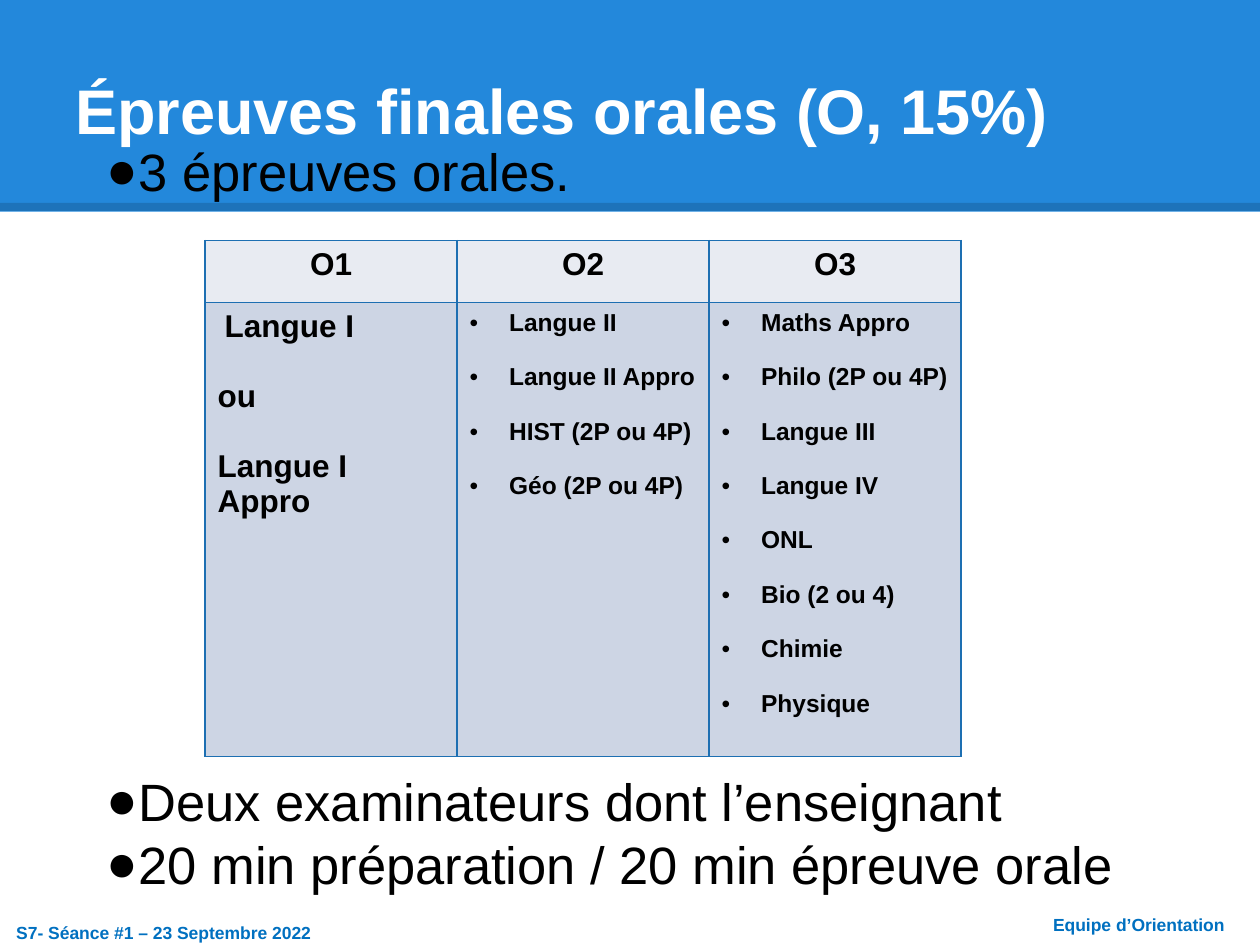
from dataclasses import dataclass

from lxml.etree import SubElement
from pptx import Presentation
from pptx.dml.color import RGBColor
from pptx.enum.shapes import MSO_CONNECTOR as Connector, MSO_SHAPE as Shape
from pptx.enum.text import MSO_ANCHOR as Anchor, MSO_AUTO_SIZE as AutoSize, PP_ALIGN as Align
from pptx.oxml import parse_xml
from pptx.oxml.ns import nsdecls, qn
from pptx.util import Pt

BLACK, WHITE, BANNER_BLUE, FOOTER_BLUE = "000000", "FFFFFF", "2388DB", "0070C0"
BORDER, HEADER_FILL, BODY_FILL = "1D6FB2", "E8EBF2", "CDD5E4"


@dataclass
class Line:
    text: str
    size: float
    color: str = BLACK
    bold: bool = True
    before: float = 0
    margin: float = 0
    hanging: float = 0
    bullet: str = ""
    align: Align = Align.LEFT


@dataclass
class Block:
    left: float
    top: float
    width: float
    height: float
    lines: list[Line]
    inset: float = 7.2
    anchor: Anchor = Anchor.TOP
    fit: AutoSize = AutoSize.NONE


@dataclass
class Column:
    heading: str
    subjects: list[Line]


def rgb(value: str) -> RGBColor:
    return RGBColor.from_string(value)


def write_lines(frame, lines: list[Line]) -> None:
    for index, line in enumerate(lines):
        paragraph = frame.add_paragraph() if index else frame.paragraphs[0]
        paragraph.alignment = line.align
        paragraph.space_before = Pt(line.before)
        run = paragraph.add_run()
        run.text = line.text
        for name, value in {"name": "Arial", "size": Pt(line.size), "bold": line.bold}.items():
            setattr(run.font, name, value)
        run.font.color.rgb = rgb(line.color)
        properties = paragraph._p.get_or_add_pPr()
        properties.set("marL", str(Pt(line.margin)))
        properties.set("indent", str(-Pt(line.hanging)))
        if line.bullet:
            bullet_color = SubElement(properties, qn("a:buClr"))
            SubElement(bullet_color, qn("a:srgbClr"), val=line.color)
            SubElement(properties, qn("a:buFont"), typeface="Arial")
            SubElement(properties, qn("a:buChar"), char=line.bullet)


def draw_block(slide, block: Block) -> None:
    box = slide.shapes.add_textbox(Pt(block.left), Pt(block.top), Pt(block.width), Pt(block.height))
    frame_format = {
        "word_wrap": True,
        "auto_size": block.fit,
        "vertical_anchor": block.anchor,
        "margin_left": Pt(7.2),
        "margin_right": Pt(7.2),
        "margin_top": Pt(block.inset),
        "margin_bottom": Pt(block.inset),
    }
    for name, value in frame_format.items():
        setattr(box.text_frame, name, value)
    write_lines(box.text_frame, block.lines)


def draw_banner(slide) -> None:
    banner = slide.shapes.add_shape(Shape.RECTANGLE, 0, 0, Pt(720), Pt(121))
    banner.shadow.inherit = False
    banner.fill.solid()
    banner.fill.fore_color.rgb = rgb(BANNER_BLUE)
    banner.line.fill.background()
    edge = slide.shapes.add_connector(Connector.STRAIGHT, 0, Pt(118.25), Pt(720), Pt(118.25))
    edge.line.width = Pt(4.5)
    edge.line.color.rgb = rgb(BLACK)
    shade = next(edge._element.iter(qn("a:srgbClr")))
    SubElement(shade, qn("a:alpha"), val="15000")
    SubElement(edge._element.spPr, qn("a:effectLst"))


def fill_cell(cell, fill: str, lines: list[Line]) -> None:
    cell.fill.solid()
    cell.fill.fore_color.rgb = rgb(fill)
    properties = cell._tc.get_or_add_tcPr()
    for index, side in enumerate(("lnL", "lnR", "lnT", "lnB")):
        properties.insert(index, parse_xml(
            f'<a:{side} {nsdecls("a")} w="{Pt(1)}"><a:solidFill>'
            f'<a:srgbClr val="{BORDER}"/></a:solidFill></a:{side}>'))
    write_lines(cell.text_frame, lines)


def draw_exam_table(slide, columns: list[Column]) -> None:
    heights = (35.4, 259.4)
    exams = slide.shapes.add_table(
        2, len(columns), Pt(117.2), Pt(137.5), Pt(144 * len(columns)), Pt(sum(heights))).table
    for row, height in zip(exams.rows, heights):
        row.height = Pt(height)
    for index, column in enumerate(columns):
        exams.columns[index].width = Pt(144)
        heading = Line(column.heading, 18, align=Align.CENTER)
        fill_cell(exams.cell(0, index), HEADER_FILL, [heading])
        fill_cell(exams.cell(1, index), BODY_FILL, column.subjects)


def subject_list(*subjects: str) -> list[Line]:
    return [Line(subject, 14, before=15.4 if index else 0, margin=22.5, hanging=22.5, bullet="•")
            for index, subject in enumerate(subjects)]


def key_point(text: str, before: float = 0) -> Line:
    return Line(text, 30, bold=False, before=before, margin=36, hanging=18, bullet="●")


def footer(text: str, left: float, top: float, width: float) -> Block:
    return Block(left, top, width, 19.4, [Line(text, 10, FOOTER_BLUE)], 3.6,
                 fit=AutoSize.SHAPE_TO_FIT_TEXT)


def main() -> None:
    deck = Presentation()
    deck.slide_width, deck.slide_height = Pt(720), Pt(540)
    slide = deck.slides.add_slide(deck.slide_layouts[6])
    draw_banner(slide)
    title = Line("Épreuves finales orales (O, 15%)", 36, WHITE)
    draw_block(slide, Block(36, 1.4, 648, 90, [title], anchor=Anchor.BOTTOM))
    draw_block(slide, Block(36, 72, 648, 425.5, [
        key_point("3 épreuves orales."),
        key_point("Deux examinateurs dont l’enseignant", before=324),
        key_point("20 min préparation / 20 min épreuve orale"),
    ]))
    draw_block(slide, footer("Equipe d’Orientation", 594.7, 519, 125.3))
    draw_exam_table(slide, [
        Column("O1", [
            Line("Langue I", 18, margin=4),
            Line("ou", 18, before=19.8),
            Line("Langue I Appro", 18, before=19.8),
        ]),
        Column("O2", subject_list(
            "Langue II", "Langue II Appro", "HIST (2P ou 4P)", "Géo (2P ou 4P)")),
        Column("O3", subject_list(
            "Maths Appro", "Philo (2P ou 4P)", "Langue III", "Langue IV",
            "ONL", "Bio (2 ou 4)", "Chimie", "Physique")),
    ])
    draw_block(slide, footer("S7- Séance #1 – 23 Septembre 2022", 2.2, 523.4, 247))
    deck.save("out.pptx")


if __name__ == "__main__":
    main()
